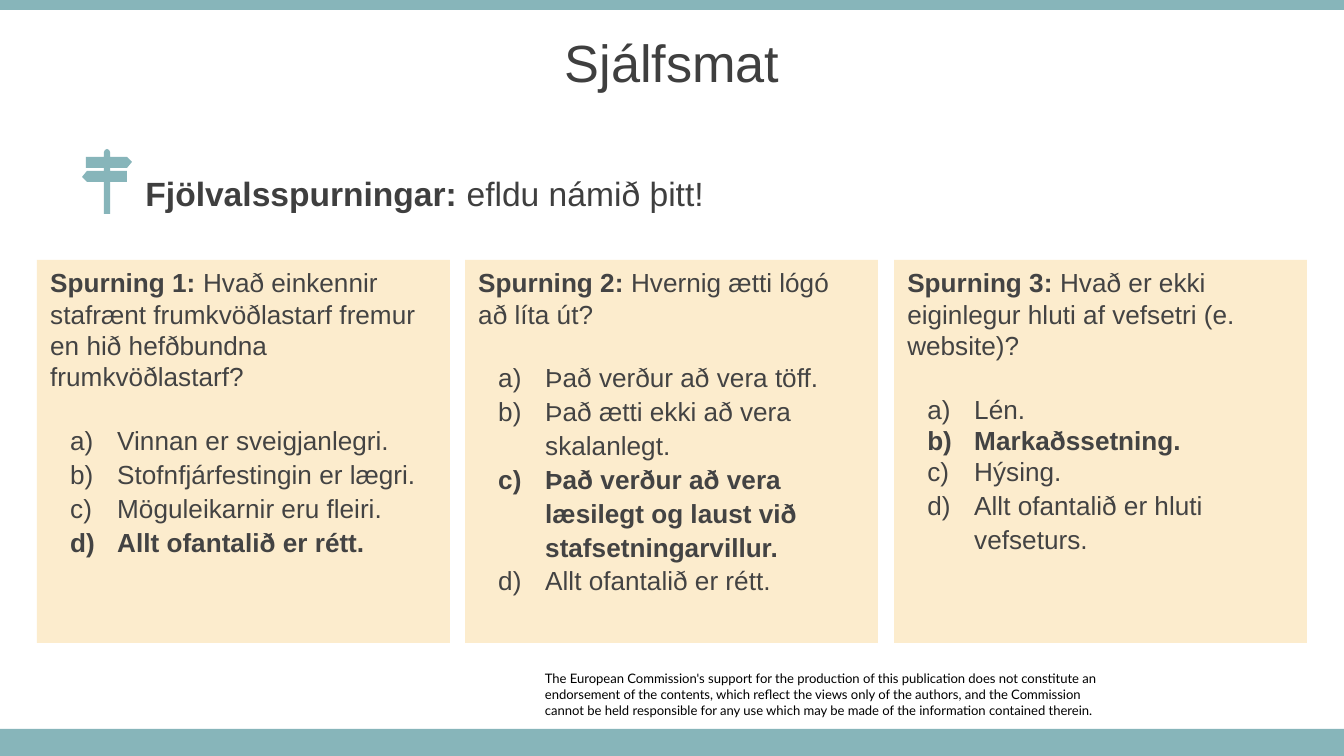
"""Build the Sjálfsmat slide: three multiple-choice questions in columns."""
from lxml.etree import SubElement
from pptx import Presentation
from pptx.dml.color import RGBColor
from pptx.enum.shapes import MSO_SHAPE as Shape
from pptx.enum.text import MSO_ANCHOR as Anchor, MSO_AUTO_SIZE as AutoSize, PP_ALIGN as Align
from pptx.oxml.ns import qn
from pptx.util import Emu, Pt

PX = 914400 / 134.4
TEAL = RGBColor(0x87, 0xB5, 0xBA)
CREAM = RGBColor(0xFC, 0xEC, 0xCD)
DARK = RGBColor(0x3F, 0x3F, 0x3F)
GREY = RGBColor(0x43, 0x43, 0x43)
BLACK = RGBColor(0, 0, 0)

QUESTIONS = [
    ("Spurning 1: ",
     "Hvað einkennir stafrænt frumkvöðlastarf fremur en hið hefðbundna frumkvöðlastarf?",
     ["Vinnan er sveigjanlegri.", "Stofnfjárfestingin er lægri.",
      "Möguleikarnir eru fleiri.", "Allt ofantalið er rétt."], 3, []),
    ("Spurning 2: ", "Hvernig ætti lógó að líta út?",
     ["Það verður að vera töff.", "Það ætti ekki að vera skalanlegt.",
      "Það verður að vera læsilegt og laust við stafsetningarvillur.",
      "Allt ofantalið er rétt."], 2, []),
    ("Spurning 3: ", "Hvað er ekki eiginlegur hluti af vefsetri (e. website)?",
     ["Lén.", "Markaðssetning.", "Hýsing.", "Allt ofantalið er hluti vefseturs."], 1, [1, 2]),
]
SIGNPOST = [
    (104, 152), (105, 150), (107, 149), (109, 150), (110, 152), (110, 157), (127, 157),
    (132, 162), (127, 168), (110, 168), (110, 171), (127, 171), (127, 182), (110, 182),
    (110, 214), (104, 214), (104, 182), (87, 182), (82, 177), (87, 171), (104, 171),
    (104, 168), (86, 168), (86, 157), (104, 157),
]


def px(*lengths):
    return [Emu(round(length * PX)) for length in lengths]


def set_font(para, name, size, color):
    para.font.name, para.font.size = name, Pt(size)
    para.font.color.rgb = color


deck = Presentation()
deck.slide_width, deck.slide_height = px(1344, 756)
page = deck.slides.add_slide(deck.slide_layouts[1])
shapes = page.shapes

bars = [shapes.add_shape(Shape.RECTANGLE, *px(0, top, 1344, height))
        for top, height in [(0, 10), (729, 27)]]
outline = shapes.build_freeform(*SIGNPOST[0], scale=PX)
outline.add_line_segments(SIGNPOST[1:], close=True)
signpost = outline.convert_to_shape()
for shape in [*bars, signpost]:
    shape.shadow.inherit = False
    shape.fill.solid()
    shape.fill.fore_color.rgb = TEAL
    shape.line.fill.background()

title, heading = shapes.title, page.placeholders[1]
for holder, place in [(title, (0, 19, 1344, 85)), (heading, (132, 172, 899, 42))]:
    holder.left, holder.top, holder.width, holder.height = px(*place)
    holder.text_frame.auto_size = AutoSize.NONE
    holder.text_frame.vertical_anchor = Anchor.MIDDLE
title.text_frame.text = "Sjálfsmat"
para = title.text_frame.paragraphs[0]
para.alignment = Align.CENTER
set_font(para, "Arial", 28, DARK)

para = heading.text_frame.paragraphs[0]
para.space_before = Pt(0)
properties = para._p.get_or_add_pPr()
properties.set("marL", "0")
properties.set("indent", "0")
SubElement(properties, qn("a:buNone"))
set_font(para, "Arial", 18, DARK)
for words, bold in [("Fjölvalsspurningar: ", True), ("efldu námið þitt!", False)]:
    span = para.add_run()
    span.text, span.font.bold = words, bold

margin, indent = px(67, -47)
for column, (label, question, answers, correct, tight) in enumerate(QUESTIONS):
    card = shapes.add_shape(Shape.RECTANGLE, *px(37 + 857 * column // 2, 260, 413, 383))
    card.shadow.inherit = False
    card.fill.solid()
    card.fill.fore_color.rgb = CREAM
    card.line.fill.background()
    frame = card.text_frame
    frame.word_wrap = True
    frame.vertical_anchor = Anchor.TOP
    para = frame.paragraphs[0]
    para.alignment = Align.LEFT
    set_font(para, "Arial", 14, GREY)
    for words, bold in [(label, True), (question, False)]:
        span = para.add_run()
        span.text, span.font.bold = words, bold
    for number, answer in enumerate(answers):
        para = frame.add_paragraph()
        para.text = answer
        para.alignment = Align.LEFT
        para.line_spacing = 1.0 if number in tight else 1.08
        para.space_before = Pt(0 if number else 16)
        properties = para._p.get_or_add_pPr()
        properties.set("marL", str(margin))
        properties.set("indent", str(indent))
        bullet_color = SubElement(properties, qn("a:buClr"))
        SubElement(bullet_color, qn("a:srgbClr"), val=str(GREY))
        SubElement(properties, qn("a:buFont"), typeface="Arial")
        SubElement(properties, qn("a:buAutoNum"), type="alphaLcParenR")
        set_font(para, "Arial", 14, GREY)
        para.font.bold = number == correct

disclaimer = shapes.add_textbox(*px(545, 671, 561, 47)).text_frame
disclaimer.word_wrap = True
disclaimer.margin_left = disclaimer.margin_right = 0
disclaimer.margin_top = disclaimer.margin_bottom = 0
disclaimer.text = (
    "The European Commission's support for the production of this publication does not "
    "constitute an endorsement of the contents, which reflect the views only of the authors, "
    "and the Commission\ncannot be held responsible for any use which may be made of the "
    "information contained therein.")
for para in disclaimer.paragraphs:
    set_font(para, "Lato", 7, BLACK)

deck.save("out.pptx")
